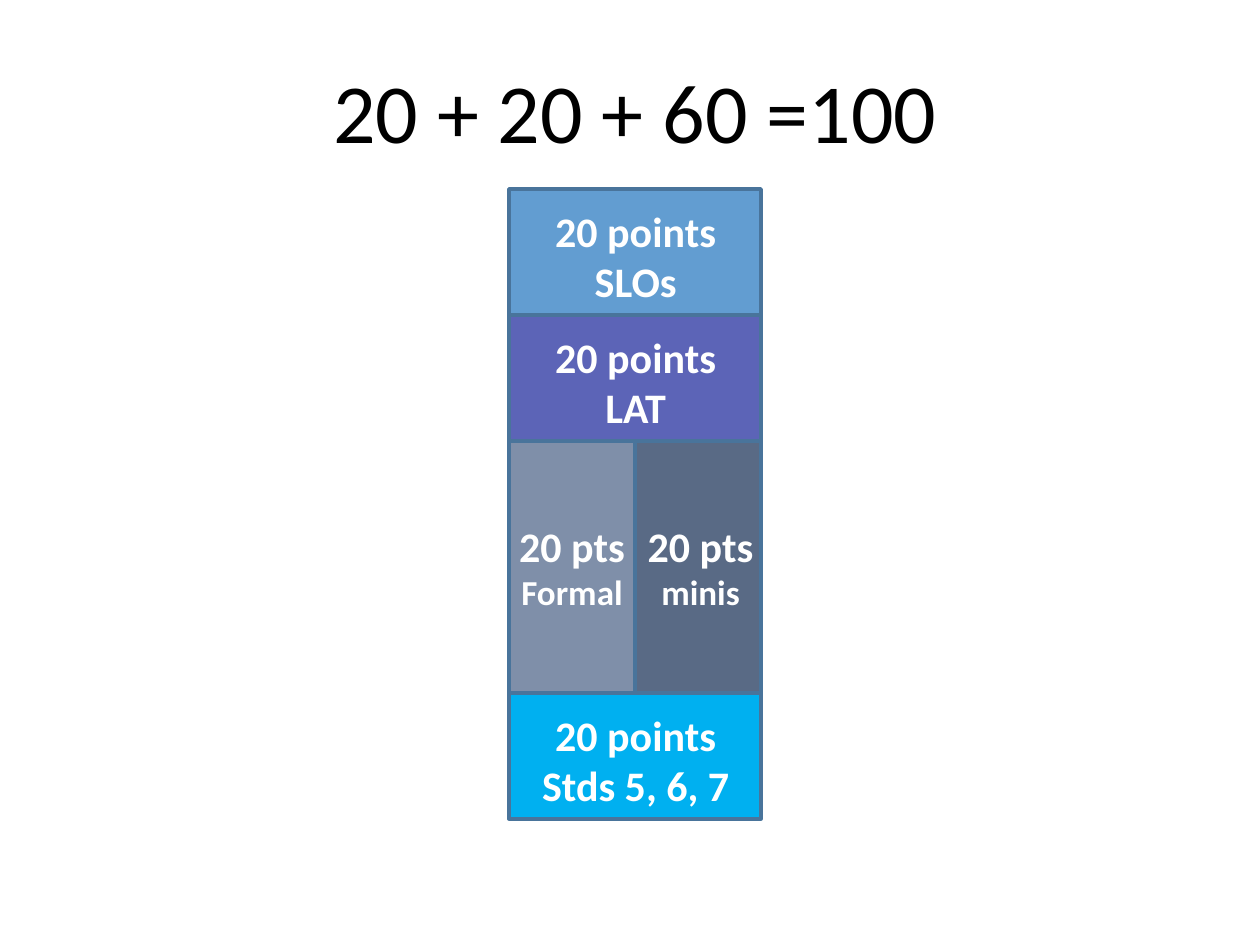
from pptx import Presentation
from pptx.dml.color import RGBColor
from pptx.enum.shapes import MSO_SHAPE
from pptx.enum.text import MSO_ANCHOR, MSO_AUTO_SIZE, PP_ALIGN
from pptx.util import Inches, Pt

# Content
TITLE = "20 + 20 + 60 =100"
# Block position and size are in grid units of one inch:
# column, row, width, height, fill, lines as (text, size)
BLOCKS = [
    (0, 0, 2, 1, "629DD1", [("20 points", 24), ("SLOs", 24)]),
    (0, 1, 2, 1, "5C64B7", [("20 points", 24), ("LAT", 24)]),
    (0, 4, 2, 1, "00B0F0", [("20 points", 24), ("Stds 5, 6, 7", 24)]),
    (0, 2, 1, 2, "7F8FA9", [("20 pts", 24), ("Formal", 20)]),
    (1, 2, 1, 2, "596A85", [("20 pts", 24), ("minis", 20)]),
]
FONT = "Calibri"
STACK_LEFT, STACK_TOP = 4.04, 1.5
# Label left offset, width and height for each block width
LABELS = {2: (0.13, 1.75, 0.91), 1: (-0.02, 1.04, 0.84)}


def color(value):
    return RGBColor.from_string(value)


def write_lines(shape, lines, ink, bold):
    frame = shape.text_frame
    frame.word_wrap = True
    frame.auto_size = MSO_AUTO_SIZE.SHAPE_TO_FIT_TEXT
    frame.vertical_anchor = MSO_ANCHOR.TOP
    for index, (text, size) in enumerate(lines):
        para = frame.paragraphs[0] if index == 0 else frame.add_paragraph()
        para.text = text
        para.alignment = PP_ALIGN.CENTER
        para.font.name = FONT
        para.font.size = Pt(size)
        para.font.bold = bold
        para.font.color.rgb = color(ink)


def add_block(page, column, row, width, height, fill, lines):
    left, top = STACK_LEFT + column, STACK_TOP + row
    block = page.shapes.add_shape(
        MSO_SHAPE.RECTANGLE, Inches(left), Inches(top), Inches(width), Inches(height))
    block.shadow.inherit = False
    block.fill.solid()
    block.fill.fore_color.rgb = color(fill)
    block.line.color.rgb = color("49749B")
    block.line.width = Pt(2)

    # The label sits in the middle of tall blocks and just below the top of flat ones
    offset, label_width, label_height = LABELS[width]
    if column == 1:
        offset = 0
    label_top = top + (height - label_height) / 2 if height > 1 else top + 0.08
    label = page.shapes.add_textbox(
        Inches(left + offset), Inches(label_top),
        Inches(label_width), Inches(label_height))
    write_lines(label, lines, "FFFFFF", True)


def main():
    deck = Presentation()
    deck.slide_width, deck.slide_height = Inches(10), Inches(7.5)
    page = deck.slides.add_slide(deck.slide_layouts[5])

    # Title
    title = page.shapes.title
    title.left, title.top = Inches(0.83), Inches(0.42)
    title.width, title.height = Inches(8.42), Inches(0.91)
    write_lines(title, [(TITLE, 48)], "000000", False)

    # Stack of point blocks
    for block in BLOCKS:
        add_block(page, *block)

    deck.save("out.pptx")


if __name__ == "__main__":
    main()
